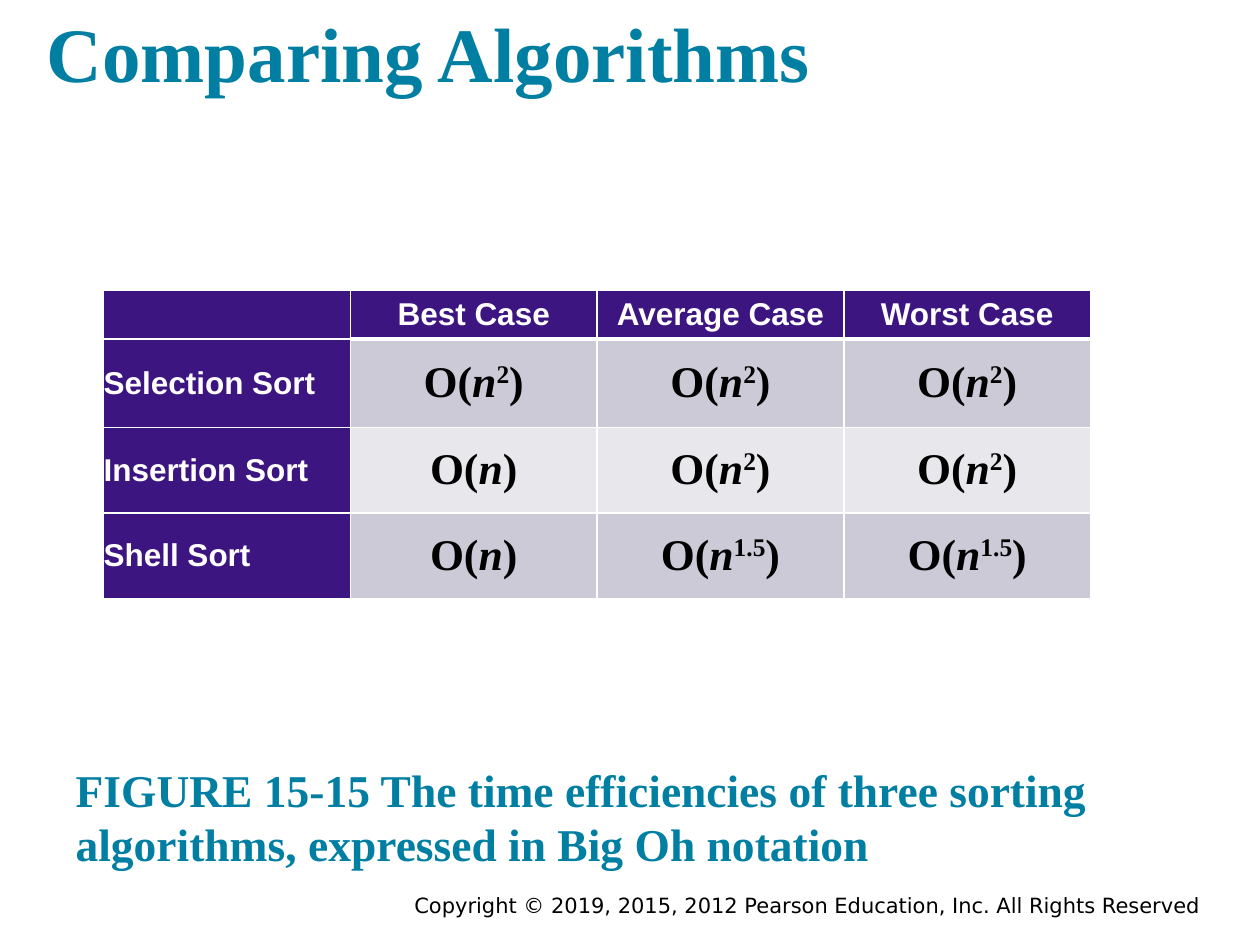
"""Build the slide that compares the time efficiencies of sorting algorithms."""
from lxml import etree
from pptx import Presentation
from pptx.dml.color import RGBColor
from pptx.enum.text import MSO_ANCHOR, MSO_AUTO_SIZE, PP_ALIGN
from pptx.oxml.ns import qn
from pptx.util import Pt

LEFT, CENTER, RIGHT = PP_ALIGN.LEFT, PP_ALIGN.CENTER, PP_ALIGN.RIGHT
TOP, MIDDLE, BOTTOM = MSO_ANCHOR.TOP, MSO_ANCHOR.MIDDLE, MSO_ANCHOR.BOTTOM
NO_AUTOFIT = MSO_AUTO_SIZE.NONE

COLORS = {"heading": "007FA3", "header": "3C1581", "odd": "CDCAD7",
          "even": "E7E7EC", "light": "FFFFFF", "dark": "000000"}
SERIF, SANS, FOOTER = "Times New Roman", "Arial", "DejaVu Sans"

CASES = ["Best Case", "Average Case", "Worst Case"]
EXPONENTS = {"Selection Sort": ["2", "2", "2"],
             "Insertion Sort": ["", "2", "2"],
             "Shell Sort": ["", "1.5", "1.5"]}


class SlideBuilder:
    """Holds the style and the current slide."""

    def __init__(self, slide):
        self.slide = slide

    def style(self, paragraph, size, face, color, bold=True, align=LEFT):
        paragraph.alignment = align
        font = paragraph.font
        font.size, font.name, font.bold = Pt(size), face, bold
        font.color.rgb = RGBColor.from_string(COLORS[color])

    def frame(self, shape, box, inset, anchor):
        shape.left, shape.top, shape.width, shape.height = map(Pt, box)
        frame = shape.text_frame
        frame.word_wrap = True
        frame.auto_size = NO_AUTOFIT
        frame.vertical_anchor = anchor
        frame.margin_left = frame.margin_right = Pt(inset)
        frame.margin_top = frame.margin_bottom = Pt(inset)
        return frame

    def placeholder(self, index, text, box, size):
        frame = self.frame(self.slide.placeholders[index], box, 7.2, BOTTOM)
        frame.text = text
        paragraph = frame.paragraphs[0]
        paragraph.space_before = Pt(0)
        properties = paragraph._p.get_or_add_pPr()
        properties.set("marL", "0")
        properties.set("indent", "0")
        etree.SubElement(properties, qn("a:buNone"))
        self.style(paragraph, size, SERIF, "heading")

    def footer(self, text, box):
        textbox = self.slide.shapes.add_textbox(*map(Pt, box))
        frame = self.frame(textbox, box, 3.6, TOP)
        frame.text = text
        self.style(frame.paragraphs[0], 12, FOOTER, "dark", False, RIGHT)

    def cell(self, cell, fill, top=1, bottom=1):
        cell.margin_left = cell.margin_right = Pt(0)
        cell.margin_top = cell.margin_bottom = Pt(0)
        cell.vertical_anchor = MIDDLE
        properties = cell._tc.get_or_add_tcPr()
        for side, width in zip("LRTB", (1, 1, top, bottom)):
            line = etree.SubElement(properties, qn(f"a:ln{side}"), w=str(Pt(width)))
            solid = etree.SubElement(line, qn("a:solidFill"))
            etree.SubElement(solid, qn("a:srgbClr"), val=COLORS["light"])
        cell.fill.solid()
        cell.fill.fore_color.rgb = RGBColor.from_string(COLORS[fill])
        return cell.text_frame.paragraphs[0]

    def label(self, paragraph, text, align):
        paragraph.text = text
        self.style(paragraph, 18, SANS, "light", align=align)

    def big_oh(self, paragraph, exponent):
        self.style(paragraph, 25, SERIF, "dark", align=CENTER)
        paragraph.add_run().text = "O("
        variable = paragraph.add_run()
        variable.text = "n"
        variable.font.italic = True
        if exponent:
            power = paragraph.add_run()
            power.text = exponent
            power._r.get_or_add_rPr().set("baseline", "32000")
        paragraph.add_run().text = ")"

    def table(self, left, top, column_width, row_heights):
        columns = len(CASES) + 1
        table = self.slide.shapes.add_table(
            len(row_heights), columns, Pt(left), Pt(top),
            Pt(column_width * columns), Pt(sum(row_heights))).table
        for column in table.columns:
            column.width = Pt(column_width)
        for row, height in zip(table.rows, row_heights):
            row.height = Pt(height)
        for column, case in enumerate([""] + CASES):
            header = self.cell(table.cell(0, column), "header", bottom=3 if case else 1)
            self.label(header, case, CENTER)
        for row, (algorithm, exponents) in enumerate(EXPONENTS.items(), 1):
            self.label(self.cell(table.cell(row, 0), "header"), algorithm, LEFT)
            band = "odd" if row % 2 else "even"
            for column, exponent in enumerate(exponents, 1):
                entry = self.cell(table.cell(row, column), band, top=3 if row == 1 else 1)
                self.big_oh(entry, exponent)


def main():
    presentation = Presentation()
    presentation.slide_width, presentation.slide_height = Pt(720), Pt(540)
    builder = SlideBuilder(presentation.slides.add_slide(presentation.slide_layouts[1]))
    builder.footer("Copyright © 2019, 2015, 2012 Pearson Education, Inc. All Rights Reserved",
                   (126, 506.2, 563.8, 22.3))
    builder.placeholder(0, "Comparing Algorithms", (19.4, 0, 670.3, 63.4), 44)
    builder.placeholder(1, "FIGURE 15-15 The time efficiencies of three sorting algorithms, "
                           "expressed in Big Oh notation", (36, 430.6, 648, 74.2), 26)
    builder.table(59.2, 165.8, 141, [28, 50.4, 49, 49])
    presentation.save("out.pptx")


if __name__ == "__main__":
    main()
